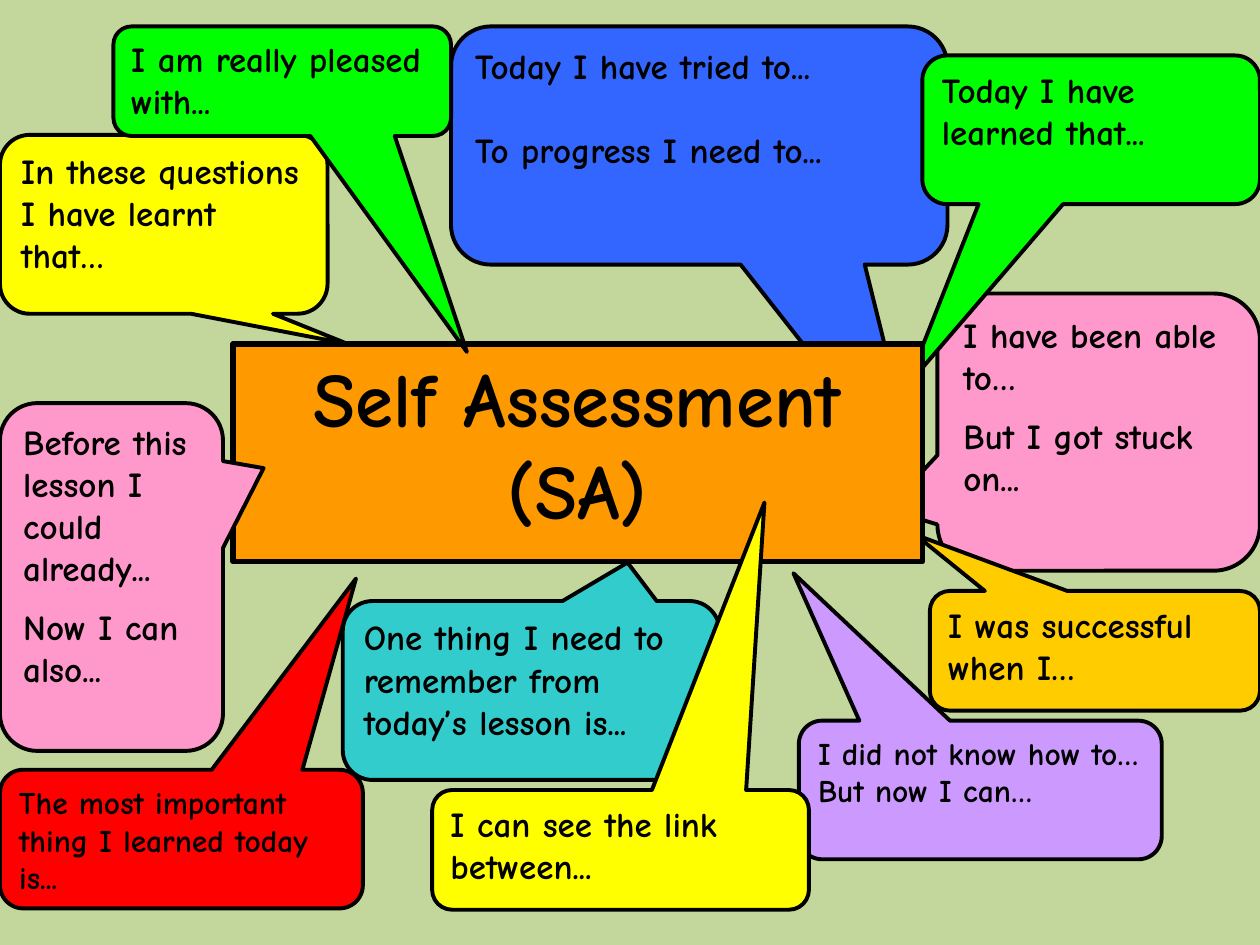
import pptx
import pptx.util
import pptx.dml.color
import pptx.enum.shapes
import pptx.enum.text

Inches = pptx.util.Inches
Pt = pptx.util.Pt
SHAPE = pptx.enum.shapes.MSO_SHAPE

COLORS = {
    "background": "C3D69B",
    "ink": "000000",
    "pink": "FF99CC",
    "blue": "3366FF",
    "green": "00FF00",
    "purple": "CC99FF",
    "teal": "33CCCC",
    "gold": "FFCC00",
    "orange": "FF9900",
    "yellow": "FFFF00",
    "red": "FF0000",
}


def rgb(name):
    return pptx.dml.color.RGBColor.from_string(COLORS[name])


class Board:
    font = "Comic Neue"
    corner = 0.167

    def __init__(self, prs):
        self.s = prs.slides.add_slide(prs.slide_layouts[6])
        fill = self.s.background.fill
        fill.solid()
        fill.fore_color.rgb = rgb("background")

    def box(self, kind, at, color, line_width):
        sp = self.s.shapes.add_shape(kind, *map(Inches, at))
        sp.shadow.inherit = False
        sp.fill.solid()
        sp.fill.fore_color.rgb = rgb(color)
        sp.line.color.rgb = rgb("ink")
        sp.line.width = Pt(line_width)
        return sp

    def add_text(self, sp, lines, size, align, gap=0):
        tf = sp.text_frame
        tf.word_wrap = True
        tf.vertical_anchor = pptx.enum.text.MSO_ANCHOR.TOP
        for i, line in enumerate(lines):
            p = tf.add_paragraph() if i else tf.paragraphs[0]
            p.alignment = align
            p.space_after = Pt(gap)
            r = p.add_run()
            r.text = line
            r.font.name = self.font
            r.font.size = Pt(size)
            r.font.bold = True
            r.font.color.rgb = rgb("ink")

    def title(self, at, color, lines):
        sp = self.box(SHAPE.RECTANGLE, at, color, 3)
        self.add_text(sp, lines, 44, pptx.enum.text.PP_ALIGN.CENTER)

    def callout(self, at, tip, color, lines, size=20, gap=0):
        sp = self.box(SHAPE.ROUNDED_RECTANGULAR_CALLOUT, at, color, 2.25)
        for i, value in enumerate((*tip, self.corner)):
            sp.adjustments[i] = value
        self.add_text(sp, lines, size, pptx.enum.text.PP_ALIGN.LEFT, gap)


def main():
    prs = pptx.Presentation()
    prs.slide_width = Inches(10)
    prs.slide_height = Inches(7.5)
    board = Board(prs)

    board.callout((7.44, 2.33, 2.56, 2.2), (-0.656, 0.278), "pink",
                  ["I have been able to…", "But I got stuck on..."], gap=10)
    board.callout((3.58, 0.21, 3.94, 1.89), (0.449, 1.47), "blue",
                  ["Today I have tried to...", "To progress I need to..."], gap=24)
    board.callout((7.32, 0.44, 2.68, 1.18), (-0.546, 1.723), "green",
                  ["Today I have learned that..."])
    board.callout((6.34, 5.72, 2.88, 1.1), (-0.515, -1.564), "purple",
                  ["I did not know how to…", "But now I can…"], size=18)
    board.callout((2.72, 4.77, 2.99, 1.42), (0.256, -0.715), "teal",
                  ["One thing I need to remember from today’s lesson is..."])
    board.callout((7.38, 4.69, 2.62, 0.95), (-0.544, -0.97), "gold",
                  ["I was successful when I…"])
    board.title((1.85, 2.73, 5.47, 1.73), "orange", ["Self Assessment", "(SA)"])
    board.callout((0, 1.07, 2.6, 1.42), (0.562, 0.669), "yellow",
                  ["In these questions I have learnt that…"])
    board.callout((0, 6.11, 2.88, 1.1), (0.481, -1.88), "red",
                  ["The most important thing I learned today is..."], size=18)
    board.callout((0, 3.2, 1.77, 2.76), (0.682, -0.313), "pink",
                  ["Before this lesson I could already...", "Now I can also..."], gap=10)
    board.callout((3.43, 6.27, 2.99, 0.95), (0.382, -2.902), "yellow",
                  ["I can see the link between..."])
    board.callout((0.9, 0.21, 2.68, 0.87), (0.547, 2.47), "green",
                  ["I am really pleased with..."])

    prs.save("out.pptx")


if __name__ == "__main__":
    main()
